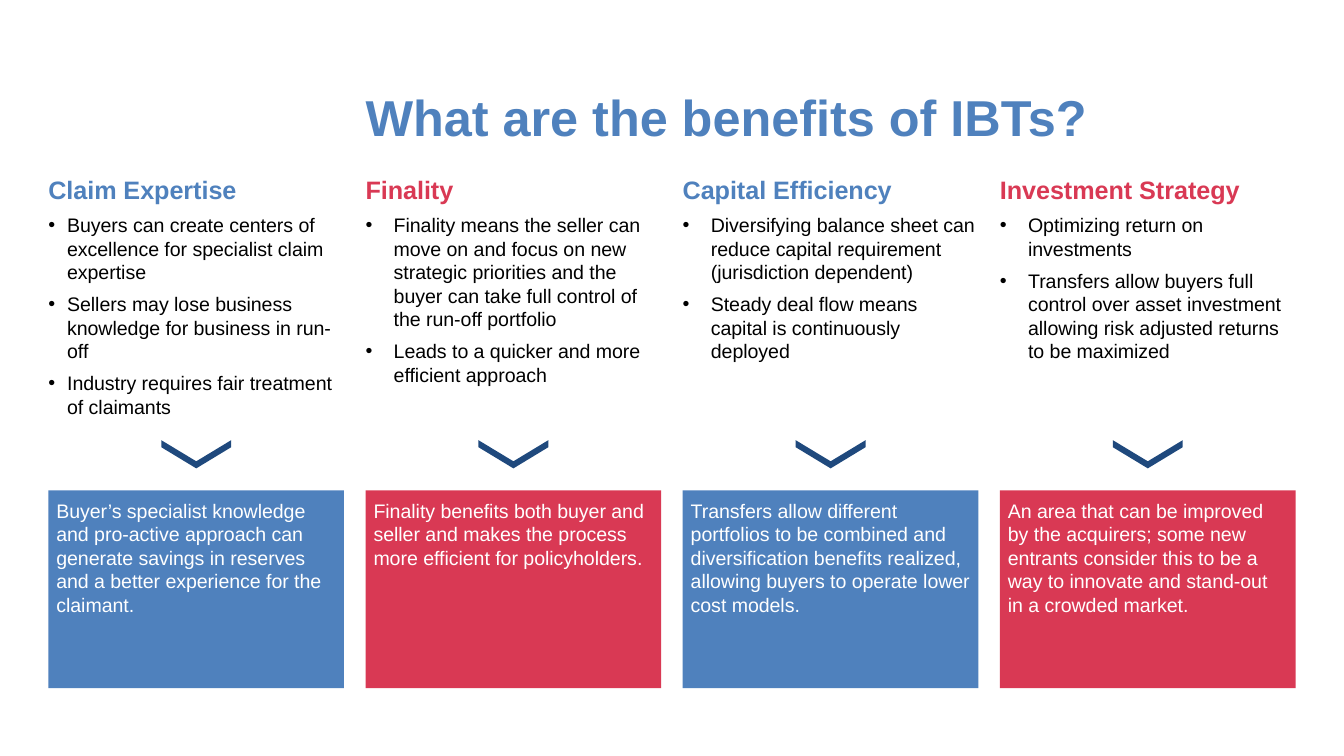
from pptx import Presentation
from pptx.dml.color import RGBColor
from pptx.enum.shapes import MSO_SHAPE
from pptx.enum.text import MSO_ANCHOR, PP_ALIGN
from pptx.oxml import parse_xml
from pptx.oxml.ns import nsdecls
from pptx.util import Inches, Pt

RECTANGLE, CHEVRON = MSO_SHAPE.RECTANGLE, MSO_SHAPE.CHEVRON
TOP, LEFT = MSO_ANCHOR.TOP, PP_ALIGN.LEFT

FONT = "Arial"
BLUE, RED, NAVY, BLACK, WHITE = "4F81BD", "D93954", "1F497D", "000000", "FFFFFF"

# heading, colour, bullet indent, bullets, conclusion
BENEFITS = [
    ("Claim Expertise", BLUE, 0.14,
     ["Buyers can create centers of excellence for specialist claim expertise",
      "Sellers may lose business knowledge for business in run-off",
      "Industry requires fair treatment of claimants"],
     "Buyer’s specialist knowledge and pro-active approach can generate savings "
     "in reserves and a better experience for the claimant."),
    ("Finality", RED, 0.21,
     ["Finality means the seller can move on and focus on new strategic priorities "
      "and the buyer can take full control of the run-off portfolio",
      "Leads to a quicker and more efficient approach"],
     "Finality benefits both buyer and seller and makes the process more efficient "
     "for policyholders."),
    ("Capital Efficiency", BLUE, 0.21,
     ["Diversifying balance sheet can reduce capital requirement "
      "(jurisdiction dependent)",
      "Steady deal flow means capital is continuously deployed"],
     "Transfers allow different portfolios to be combined and diversification "
     "benefits realized, allowing buyers to operate lower cost models."),
    ("Investment Strategy", RED, 0.21,
     ["Optimizing return on investments",
      "Transfers allow buyers full control over asset investment allowing risk "
      "adjusted returns to be maximized"],
     "An area that can be improved by the acquirers; some new entrants consider "
     "this to be a way to innovate and stand-out in a crowded market."),
]


def color(hex_string):
    return RGBColor.from_string(hex_string)


def write(frame, text, first=False, size=10.5, fill=BLACK, bold=False,
          indent=0, before=0, line_spacing=None):
    """Write one paragraph; a positive indent makes it a bullet."""
    paragraph = frame.paragraphs[0] if first else frame.add_paragraph()
    paragraph.alignment = LEFT
    if indent:
        properties = paragraph._p.get_or_add_pPr()
        properties.set("marL", str(Inches(indent)))
        properties.set("indent", str(-Inches(indent)))
        namespace = nsdecls("a")
        for bullet_xml in (
                f'<a:buClr {namespace}><a:srgbClr val="{BLACK}"/></a:buClr>',
                f'<a:buFont {namespace} typeface="{FONT}"/>',
                f'<a:buChar {namespace} char="•"/>'):
            properties.append(parse_xml(bullet_xml))
    if before:
        paragraph.space_before = Pt(before)
    if line_spacing:
        paragraph.line_spacing = line_spacing
    run = paragraph.add_run()
    run.text = text
    run.font.name = FONT
    run.font.size = Pt(size)
    run.font.bold = bold
    run.font.color.rgb = color(fill)


class BenefitsSlide:
    """Four equal columns; rows are measured in inches from the top."""
    MARGIN, COLUMN, PITCH = 0.36, 2.2, 2.36
    TITLE_ROW, TEXT_ROW, ARROW_ROW, BOX_ROW = 0.71, 1.3, 3.12, 3.65

    def __init__(self, presentation):
        self.slide = presentation.slides.add_slide(presentation.slide_layouts[6])

    def left(self, column):
        return self.MARGIN + column * self.PITCH

    def prepare(self, frame, inset=0):
        frame.word_wrap = True
        frame.vertical_anchor = TOP
        frame.margin_left = frame.margin_right = Inches(inset)
        frame.margin_top = frame.margin_bottom = Inches(inset)
        return frame

    def text_box(self, left, top, width, height):
        box = self.slide.shapes.add_textbox(
            Inches(left), Inches(top), Inches(width), Inches(height))
        return self.prepare(box.text_frame)

    def shape(self, kind, left, top, width, height, fill):
        shape = self.slide.shapes.add_shape(
            kind, Inches(left), Inches(top), Inches(width), Inches(height))
        shape.shadow.inherit = False
        shape.fill.solid()
        shape.fill.fore_color.rgb = color(fill)
        shape.line.fill.background()
        return shape

    def title(self, text):
        frame = self.text_box(self.left(1), self.TITLE_ROW, 5.47, 0.44)
        write(frame, text, first=True, size=27, fill=BLUE, bold=True,
              line_spacing=0.85)

    def points(self, column, heading, fill, indent, bullets):
        height = 2.02 if len(bullets) > 2 else 1.42
        frame = self.text_box(self.left(column), self.TEXT_ROW, self.COLUMN, height)
        write(frame, heading, first=True, size=13.5, fill=fill, bold=True)
        for bullet in bullets:
            write(frame, bullet, indent=indent, before=4.5)

    def conclusion(self, column, text, fill):
        box = self.shape(RECTANGLE, self.left(column), self.BOX_ROW,
                         self.COLUMN, 1.47, fill)
        write(self.prepare(box.text_frame, inset=0.06), text, first=True, fill=WHITE)

    def arrow(self, column):
        width, height = 0.21, 0.52
        left = self.left(column) + (self.COLUMN - width) / 2
        chevron = self.shape(CHEVRON, left, self.ARROW_ROW, width, height, NAVY)
        chevron.adjustments[0] = 0.75
        chevron.rotation = 90


def main():
    presentation = Presentation()
    presentation.slide_width = Inches(10)
    presentation.slide_height = Inches(10 * 9 / 16)
    page = BenefitsSlide(presentation)
    page.title("What are the benefits of IBTs?")
    # One column per benefit: points, conclusion, arrow
    for column, (heading, fill, indent, bullets, result) in enumerate(BENEFITS):
        page.points(column, heading, fill, indent, bullets)
        page.conclusion(column, result, fill)
        page.arrow(column)
    presentation.save("out.pptx")


if __name__ == "__main__":
    main()
